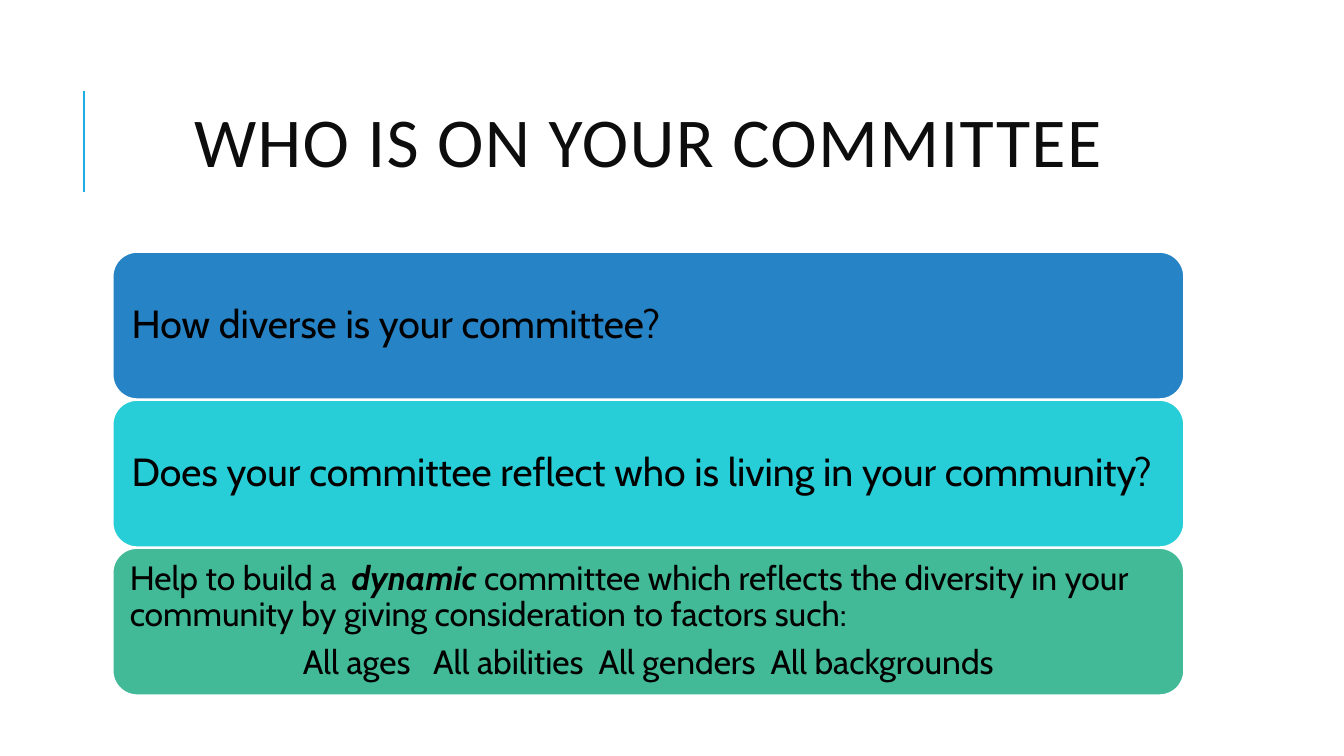
from lxml.etree import SubElement
from pptx import Presentation
from pptx.dml.color import RGBColor
from pptx.enum.shapes import MSO_CONNECTOR, MSO_SHAPE
from pptx.enum.text import MSO_ANCHOR, PP_ALIGN
from pptx.oxml.ns import qn
from pptx.util import Cm, Pt

LEFT, WIDTH = 2.84, 27.0
BAR_PITCH, BAR_GAP = 3.73, 0.02

# fill, text size, inset in cm, paragraphs as (alignment, [(text, emphasised)])
BARS = [
    ("2683C6", 28, 0.3, [
        (PP_ALIGN.LEFT, [("How diverse is your committee?", False)])]),
    ("27CED7", 28, 0.3, [
        (PP_ALIGN.LEFT, [("Does your committee reflect who is living in your community?", False)])]),
    ("42BA97", 24, 0.25, [
        (PP_ALIGN.LEFT, [
            ("Help to build a  ", False),
            ("dynamic ", True),
            ("committee which reflects the diversity in your community "
             "by giving consideration to factors such:", False)]),
        (PP_ALIGN.CENTER, [
            ("All ages   All abilities  All genders  All backgrounds", False)])]),
]


def rgb(value):
    return RGBColor.from_string(value)


def style_run(r, font, size, color):
    r.font.name = font
    r.font.size = Pt(size)
    r.font.color.rgb = rgb(color)


def add_title(slide, left, top, width, height):
    """Centred heading with the accent rule to its left."""
    x = Cm(left - 0.72)
    rule = slide.shapes.add_connector(
        MSO_CONNECTOR.STRAIGHT, x, Cm(top + 3.2), x, Cm(top + 0.66))
    rule.line.color.rgb = rgb("1CADE4")
    rule.line.width = Pt(1.5)
    SubElement(rule._element.spPr, qn("a:effectLst"))

    tf = slide.shapes.add_textbox(Cm(left), Cm(top), Cm(width), Cm(height)).text_frame
    tf.word_wrap = True
    tf.vertical_anchor = MSO_ANCHOR.MIDDLE
    tf.text = "WHO IS ON YOUR COMMITTEE"
    p = tf.paragraphs[0]
    p.alignment = PP_ALIGN.CENTER
    p.line_spacing = 0.8
    r = p.runs[0]
    style_run(r, "Calibri", 50, "0D0D0D")
    r.font._element.set("spc", "100")


def add_bar(slide, left, top, width, height, fill, size, inset, paragraphs):
    s = slide.shapes.add_shape(
        MSO_SHAPE.ROUNDED_RECTANGLE, Cm(left), Cm(top), Cm(width), Cm(height))
    s.shadow.inherit = False
    s.fill.solid()
    s.fill.fore_color.rgb = rgb(fill)
    s.line.color.rgb = rgb("FFFFFF")
    s.line.width = Pt(1.25)

    tf = s.text_frame
    tf.word_wrap = True
    tf.vertical_anchor = MSO_ANCHOR.MIDDLE
    tf.margin_left = tf.margin_right = tf.margin_top = tf.margin_bottom = Cm(inset)
    for i, (alignment, runs) in enumerate(paragraphs):
        p = tf.add_paragraph() if i else tf.paragraphs[0]
        p.alignment = alignment
        p.line_spacing = 0.9
        p.space_after = Pt(0.35 * size)
        for text, emphasised in runs:
            r = p.add_run()
            r.text = text
            style_run(r, "Cabin", size, "000000")
            r.font.bold = r.font.italic = emphasised


def add_bars(slide, left, top, width):
    for i, bar in enumerate(BARS):
        add_bar(slide, left, top + i * BAR_PITCH, width, BAR_PITCH - BAR_GAP, *bar)


def main():
    prs = Presentation()
    prs.slide_width, prs.slide_height = Cm(33.87), Cm(19.05)
    slide = prs.slides.add_slide(prs.slide_layouts[6])
    add_title(slide, LEFT, 1.63, WIDTH, 4.17)
    add_bars(slide, LEFT, 6.35, WIDTH)
    prs.save("out.pptx")


if __name__ == "__main__":
    main()
